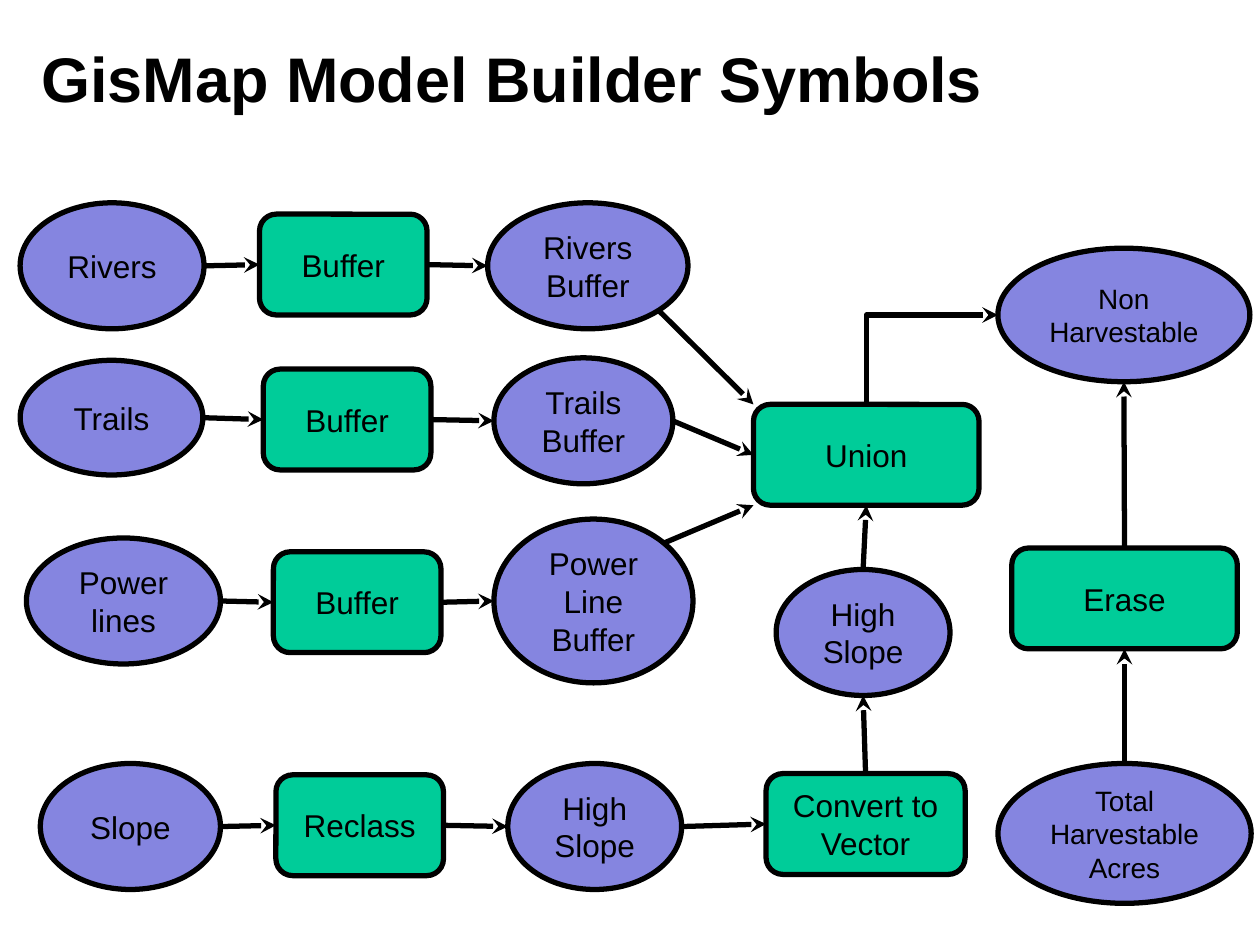
from dataclasses import dataclass
from math import sqrt

from lxml import etree
from pptx import Presentation, util as u
from pptx.dml.color import RGBColor
from pptx.enum import shapes, text
from pptx.oxml.ns import qn

COLUMNS, ROWS = 100, 75
SLIDE_WIDTH, SLIDE_HEIGHT = u.Inches(10), u.Inches(7.5)


@dataclass(frozen=True)
class Theme:
    font: str = "Arial"
    ink: RGBColor = RGBColor(0x00, 0x00, 0x00)
    data: RGBColor = RGBColor(0x85, 0x85, 0xE0)
    tool: RGBColor = RGBColor(0x00, 0xCC, 0x99)
    title_size: int = 36
    label_size: int = 18
    small_size: int = 16
    line_width: int = 3


THEME = Theme()


@dataclass(frozen=True)
class Node:
    """A model element, placed in grid columns and rows."""
    label: str
    column: float
    row: float
    width: float
    height: float = 10
    is_tool: bool = False
    size: int = THEME.label_size

    def point(self, across: int, down: int) -> tuple[float, float]:
        """Outline point towards a side or corner; each direction is -1, 0 or 1."""
        diagonal = across and down and not self.is_tool
        reach = 0.5 / sqrt(2) if diagonal else 0.5
        return (self.column + self.width * (0.5 + across * reach),
                self.row + self.height * (0.5 + down * reach))


def data(label: str, column: float, row: float, width: float, height: float = 10,
         size: int = THEME.label_size) -> Node:
    return Node(label, column, row, width, height, size=size)


def tool(label: str, column: float, row: float, width: float = 13.3) -> Node:
    return Node(label, column, row, width, 8, is_tool=True)


TOP, BOTTOM, LEFT, RIGHT = (0, -1), (0, 1), (-1, 0), (1, 0)
TOP_LEFT, BOTTOM_LEFT, TOP_RIGHT, BOTTOM_RIGHT = (-1, -1), (-1, 1), (1, -1), (1, 1)

rivers_row = [data("Rivers", 1.6, 16.1, 14.6), tool("Buffer", 20.6, 17),
              data("Rivers\nBuffer", 38.7, 16.1, 15.9)]
trails_row = [data("Trails", 1.6, 28.6, 14.5, 9.1), tool("Buffer", 20.9, 29.3),
              data("Trails\nBuffer", 39.2, 28.4, 14.2)]
power_row = [data("Power lines", 2.1, 42.7, 15.4), tool("Buffer", 21.7, 43.8),
             data("Power Line Buffer", 39.2, 41.2, 15.8, 13)]
slope_row = [data("Slope", 3.2, 60.6, 14.3), tool("Reclass", 21.9, 61.5),
             data("High\nSlope", 40.3, 60.6, 13.8),
             tool("Convert to\nVector", 60.8, 61.4, 15.8)]
CHAINS = [rivers_row, trails_row, power_row, slope_row]

high_slope = data("High\nSlope", 61.6, 45.2, 13.8)
union = tool("Union", 59.8, 32.1, 17.9)
total = data("Total\nHarvestable\nAcres", 79.2, 60.6, 20.1, 11.1, THEME.small_size)
erase = tool("Erase", 80.3, 43.5, 17.9)
non_harvestable = data("Non\nHarvestable", 79.2, 19.7, 20, 10.6, THEME.small_size)
NODES = [*sum(CHAINS, []), high_slope, union, total, erase, non_harvestable]

LINKS = [(start, RIGHT, end, LEFT)
         for chain in CHAINS for start, end in zip(chain, chain[1:])]
LINKS += [
    (rivers_row[-1], BOTTOM_RIGHT, union, TOP_LEFT),
    (trails_row[-1], RIGHT, union, LEFT),
    (power_row[-1], TOP_RIGHT, union, BOTTOM_LEFT),
    (slope_row[-1], TOP, high_slope, BOTTOM),
    (high_slope, TOP, union, BOTTOM),
    (total, TOP, erase, BOTTOM),
    (erase, TOP, non_harvestable, BOTTOM),
]


def x(columns: float) -> int:
    return round(SLIDE_WIDTH * columns / COLUMNS)


def y(rows: float) -> int:
    return round(SLIDE_HEIGHT * rows / ROWS)


def write(shape, content: str, size: int, bold: bool = False,
          alignment=text.PP_ALIGN.CENTER) -> None:
    frame = shape.text_frame
    frame.text = content
    frame.word_wrap = True
    frame.vertical_anchor = text.MSO_ANCHOR.MIDDLE
    for paragraph in frame.paragraphs:
        paragraph.alignment = alignment
        for run in paragraph.runs:
            run.font.name = THEME.font
            run.font.size = u.Pt(size)
            run.font.bold = bold
            run.font.color.rgb = THEME.ink


def outline(shape) -> None:
    shape.line.color.rgb = THEME.ink
    shape.line.width = u.Pt(THEME.line_width)


def draw_node(slide, node: Node) -> None:
    kind = (shapes.MSO_SHAPE.ROUNDED_RECTANGLE if node.is_tool
            else shapes.MSO_SHAPE.OVAL)
    shape = slide.shapes.add_shape(kind, x(node.column), y(node.row),
                                   x(node.width), y(node.height))
    shape.shadow.inherit = False
    shape.fill.solid()
    shape.fill.fore_color.rgb = THEME.tool if node.is_tool else THEME.data
    outline(shape)
    write(shape, node.label, node.size)


def draw_arrow(slide, start: tuple[float, float], end: tuple[float, float],
               kind=shapes.MSO_CONNECTOR.STRAIGHT):
    connector = slide.shapes.add_connector(kind, x(start[0]), y(start[1]),
                                           x(end[0]), y(end[1]))
    outline(connector)
    etree.SubElement(connector.line._get_or_add_ln(), qn("a:tailEnd"), type="stealth")
    etree.SubElement(connector._element.spPr, qn("a:effectLst"))
    return connector


def draw_up_and_right(slide, start: tuple[float, float],
                      end: tuple[float, float]) -> None:
    """One-bend arrow: a doubly flipped elbow, turned a quarter about its centre."""
    middle_x, middle_y = (start[0] + end[0]) / 2, (start[1] + end[1]) / 2
    half_width, half_height = (start[1] - end[1]) / 2, (end[0] - start[0]) / 2
    connector = draw_arrow(slide, (middle_x + half_width, middle_y + half_height),
                           (middle_x - half_width, middle_y - half_height),
                           shapes.MSO_CONNECTOR.ELBOW)
    properties = connector._element.spPr
    properties.find(qn("a:xfrm")).set("rot", str(90 * 60000))
    properties.find(qn("a:prstGeom")).set("prst", "bentConnector2")


def main() -> None:
    presentation = Presentation()
    presentation.slide_width, presentation.slide_height = SLIDE_WIDTH, SLIDE_HEIGHT
    slide = presentation.slides.add_slide(presentation.slide_layouts[6])

    title = slide.shapes.add_textbox(x(2.3), y(1.5), x(80.3), y(9.3))
    write(title, "GisMap Model Builder Symbols", THEME.title_size, bold=True,
          alignment=text.PP_ALIGN.LEFT)
    for start, start_side, end, end_side in LINKS:
        draw_arrow(slide, start.point(*start_side), end.point(*end_side))
    draw_up_and_right(slide, union.point(*TOP), non_harvestable.point(*LEFT))
    for node in NODES:
        draw_node(slide, node)

    presentation.save("out.pptx")


if __name__ == "__main__":
    main()
